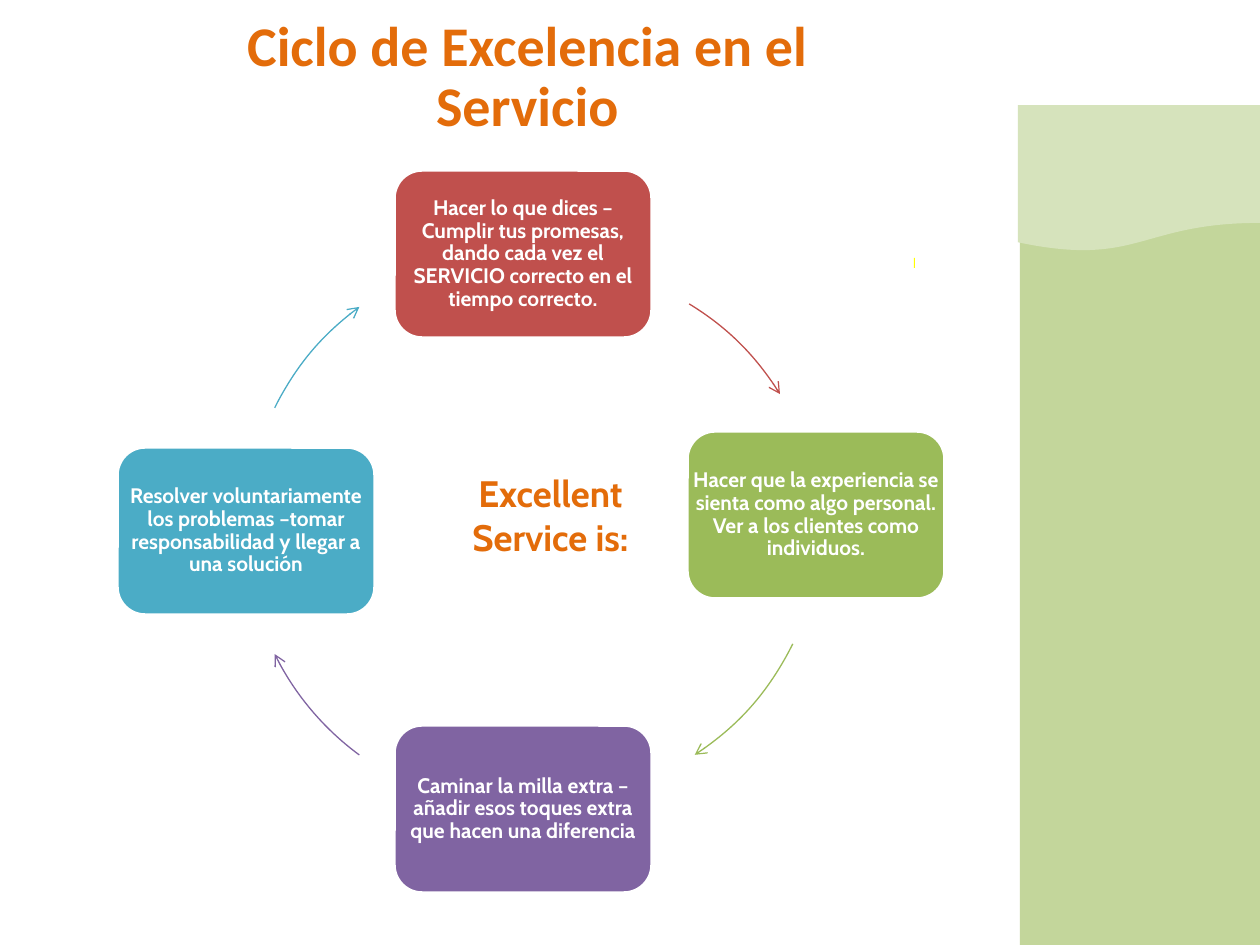
from lxml.etree import SubElement as Sub
from pptx import Presentation
from pptx.dml.color import RGBColor as RGB
from pptx.enum.shapes import MSO_SHAPE as Kind
from pptx.enum.text import MSO_ANCHOR as Anchor, PP_ALIGN as Align
from pptx.oxml.ns import qn
from pptx.util import Emu, Pt

SCALE = 914400 / 126
WHITE = RGB(0xFF, 0xFF, 0xFF)
ORANGE = RGB(0xE3, 0x6C, 0x0A)
RED = RGB(0xC0, 0x50, 0x4D)
GREEN = RGB(0x9B, 0xBB, 0x59)
PURPLE = RGB(0x80, 0x64, 0xA2)
BLUE = RGB(0x4B, 0xAC, 0xC6)
LEAF = RGB(0xC3, 0xD6, 0x9B)
PALE = RGB(0xD6, 0xE3, 0xBC)
YELLOW = RGB(0xFF, 0xFF, 0x00)

TITLE = {"name": "Calibri", "size": Pt(32), "bold": True}
HUB = {"name": "Cabin", "size": Pt(21), "bold": True}
BODY = {"name": "Cabin", "size": Pt(12), "bold": True}

CARD = (258, 168)
RING = (556, 556)
STEPS = [
    (RED, (394, 170), (266, 263), (301.5, 328.1),
     "Hacer lo que dices –Cumplir tus promesas, dando cada vez el "
     "SERVICIO correcto en el tiempo correcto."),
    (GREEN, (687, 431), (265, 244), (26, 56.9),
     "Hacer que la experiencia se sienta como algo personal. "
     "Ver a los clientes como individuos."),
    (PURPLE, (394, 725), (246, 253), (126.3, 153.7),
     "Caminar la milla extra –añadir esos toques extra "
     "que hacen una diferencia"),
    (BLUE, (117, 447), (246, 253), (206.3, 233.7),
     "Resolver voluntariamente los problemas –tomar "
     "responsabilidad y llegar a una solución"),
]


def px(num):
    return Emu(round(num * SCALE))


class Page:
    def __init__(self, deck):
        self.shapes = deck.slides.add_slide(deck.slide_layouts[6]).shapes

    def shape(self, kind, box, fill=None, line=None, width=2):
        item = self.shapes.add_shape(kind, *map(px, box))
        item.shadow.inherit = False
        if fill is None:
            item.fill.background()
        else:
            item.fill.solid()
            item.fill.fore_color.rgb = fill
        if line is None:
            item.line.fill.background()
        else:
            item.line.color.rgb = line
            item.line.width = Pt(width)
        return item

    def text(self, item, words, style, color, pad=(0, 0),
             anchor=Anchor.MIDDLE, gap=0.9):
        frame = item.text_frame
        side, top = map(px, pad)
        form = {"word_wrap": True, "vertical_anchor": anchor,
                "margin_left": side, "margin_right": side,
                "margin_top": top, "margin_bottom": top}
        for key, val in form.items():
            setattr(frame, key, val)
        para = frame.paragraphs[0]
        para.alignment = Align.CENTER
        para.line_spacing = gap
        run = para.add_run()
        run.text = words
        for key, val in style.items():
            setattr(run.font, key, val)
        run.font.color.rgb = color

    def label(self, box, *args, **form):
        self.text(self.shapes.add_textbox(*map(px, box)), *args, **form)

    def card(self, spot, fill, words):
        box = spot + CARD
        self.shape(Kind.ROUNDED_RECTANGLE, box, fill, WHITE)
        self.label(box, words, BODY, WHITE, pad=(6, 6))

    def arc(self, spot, turn, color):
        item = self.shape(Kind.ARC, spot + RING, line=color, width=0.75)
        for num, deg in enumerate(turn):
            item.adjustments[num] = deg * 0.6
        line = item.element.spPr.get_or_add_ln()
        Sub(line, qn("a:tailEnd"), type="arrow")


def main():
    deck = Presentation()
    deck.slide_width, deck.slide_height = px(1260), px(945)
    page = Page(deck)
    page.shape(Kind.RECTANGLE, (1020, 140, 240, 805), LEAF)
    page.shape(Kind.FLOWCHART_DOCUMENT, (1018, 105, 242, 147), PALE)
    page.label((157, 31, 741, 95), "Ciclo de Excelencia en el Servicio",
               TITLE, ORANGE, pad=(10, 5))
    page.shape(Kind.RECTANGLE, (914, 258, 1, 10), YELLOW)
    hub = page.shape(Kind.ROUNDED_RECTANGLE, (449, 465, 203, 111))
    page.text(hub, "Excellent Service is:", HUB, ORANGE,
              anchor=Anchor.TOP, gap=1.0)
    for color, spot, ring, turn, words in STEPS:
        page.card(spot, color, words)
        page.arc(ring, turn, color)
    deck.save("out.pptx")


if __name__ == "__main__":
    main()
